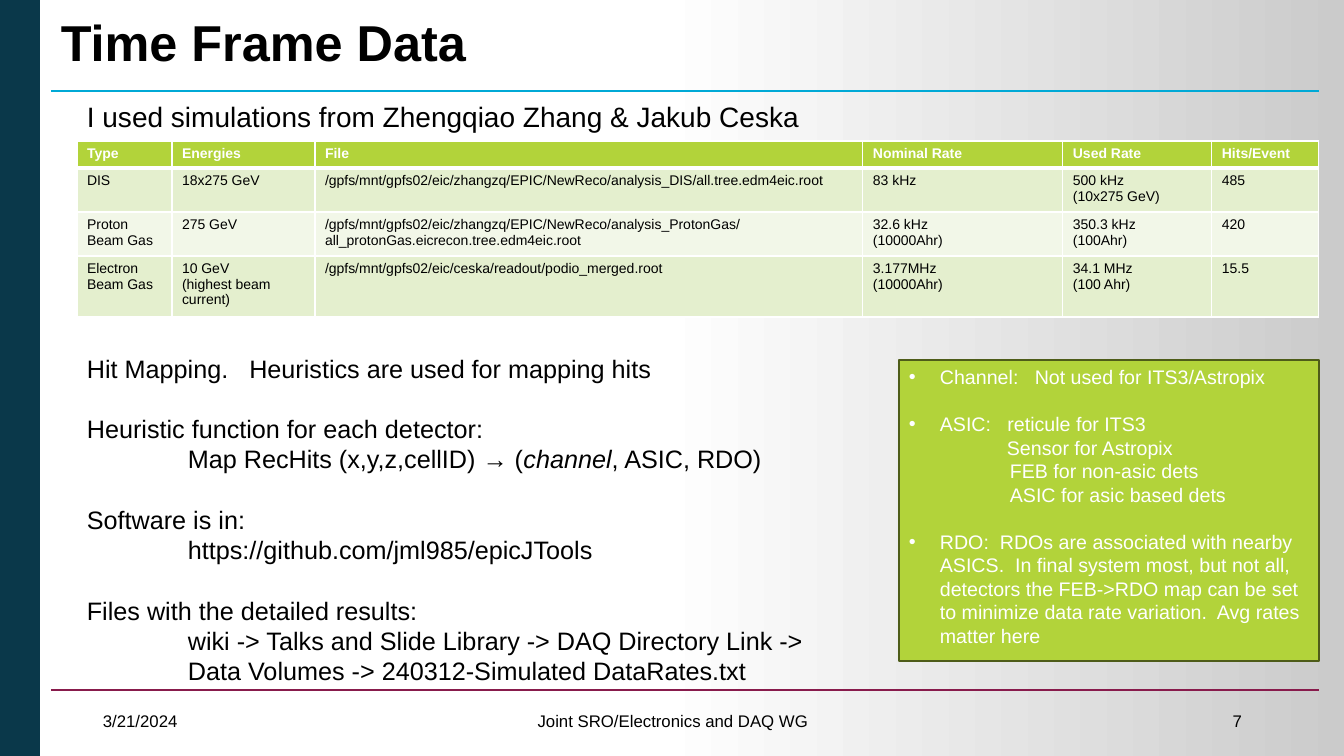
from pptx import Presentation
from pptx.dml.color import RGBColor
from pptx.enum.shapes import MSO_CONNECTOR, MSO_SHAPE
from pptx.enum.text import MSO_ANCHOR, PP_ALIGN
from pptx.oxml import parse_xml
from pptx.oxml.ns import nsdecls, qn
from pptx.util import Emu, Pt

STRAIGHT = MSO_CONNECTOR.STRAIGHT
RECTANGLE = MSO_SHAPE.RECTANGLE
TOP, MIDDLE = MSO_ANCHOR.TOP, MSO_ANCHOR.MIDDLE
LEFT, CENTER, RIGHT = PP_ALIGN.LEFT, PP_ALIGN.CENTER, PP_ALIGN.RIGHT

EMU_PER_PX = 12192000 / 1344
FONT = "Arial"
COLORS = {
    "black": "000000", "white": "FFFFFF", "navy": "0A384A", "gray": "CBCBCB",
    "cyan": "00A9D6", "maroon": "881B4C", "green": "B2D33A", "olive": "4E5C19",
    "band_dark": "E4EFCE", "band_light": "F2F7E8",
}


def px(length):
    return Emu(round(length * EMU_PER_PX))


def rgb(name):
    return RGBColor.from_string(COLORS[name])


def xml(tag, body="", attributes=""):
    return parse_xml(f"<a:{tag} {nsdecls('a')} {attributes}>{body}</a:{tag}>")


def solid(name):
    return f'<a:solidFill><a:srgbClr val="{COLORS[name]}"/></a:solidFill>'


def write(paragraph, text, size=18, color="black", bold=False, align=LEFT,
          pitch=None, before=0, margin=0, hanging=0):
    properties = paragraph._p.get_or_add_pPr()
    properties.set("marL", str(px(margin)))
    properties.set("indent", str(-px(hanging)))
    if hanging:
        properties.append(xml("buFont", attributes=f'typeface="{FONT}"'))
        properties.append(xml("buChar", attributes='char="•"'))
    paragraph.alignment = align
    if pitch:
        paragraph.line_spacing = pitch
    if before:
        paragraph.space_before = before
    pieces = (text,) if isinstance(text, str) else text
    for position, piece in enumerate(pieces):
        run = paragraph.add_run()
        run.text = piece
        run.font.name = FONT
        run.font.size = Pt(size)
        run.font.bold = bold
        run.font.italic = position % 2 == 1
        run.font.color.rgb = rgb(color)


class SlideBuilder:
    def __init__(self, slide):
        self.slide = slide

    def background(self, *stops):
        fill = self.slide.background.fill
        fill.gradient()
        fill.gradient_angle = 0
        stop_list = next(self.slide.element.iter(qn("a:gsLst")))
        for old in list(stop_list):
            stop_list.remove(old)
        for percent, name in stops:
            stop_list.append(xml("gs", f'<a:srgbClr val="{COLORS[name]}"/>',
                                 f'pos="{percent * 1000}"'))

    def rule(self, y, color, width):
        rule = self.slide.shapes.add_connector(
            STRAIGHT, px(51), px(y), px(1319), px(y))
        rule.line.color.rgb = rgb(color)
        rule.line.width = Pt(width)
        rule._element.spPr.append(xml("effectLst"))

    def fill_frame(self, frame, lines, anchor, style):
        frame.word_wrap = True
        frame.vertical_anchor = anchor
        for index, (text, extra) in enumerate(lines):
            paragraph = frame.add_paragraph() if index else frame.paragraphs[0]
            write(paragraph, text, **{**style, **extra})

    def text(self, box, *lines, anchor=TOP, **style):
        frame = self.slide.shapes.add_textbox(*map(px, box)).text_frame
        self.fill_frame(frame, lines, anchor, style)

    def panel(self, box, *lines, fill, line, **style):
        panel = self.slide.shapes.add_shape(RECTANGLE, *map(px, box))
        panel.shadow.inherit = False
        panel.fill.solid()
        panel.fill.fore_color.rgb = rgb(fill)
        panel.line.color.rgb = rgb(line)
        panel.line.width = Pt(1)
        self.fill_frame(panel.text_frame, lines, TOP, style)

    def cell(self, cell, text, row):
        properties = cell._tc.get_or_add_tcPr()
        for side in "LRTB":
            thick = (row, side) in ((0, "B"), (1, "T"))
            properties.append(xml(f"ln{side}", solid("white"),
                                  f'w="{Pt(3 if thick else 1)}"'))
        cell.fill.solid()
        fill = "green" if row == 0 else "band_dark" if row % 2 else "band_light"
        cell.fill.fore_color.rgb = rgb(fill)
        style = {"size": 10, "bold": row == 0,
                 "color": "black" if row else "white"}
        lines = [(line, {}) for line in text.split("\n")]
        self.fill_frame(cell.text_frame, lines, TOP, style)

    def table(self, left, top, widths, heights, rows):
        table = self.slide.shapes.add_table(
            len(heights), len(widths), px(left), px(top),
            px(sum(widths)), px(sum(heights))).table
        for column, width in zip(table.columns, widths):
            column.width = px(width)
        for row, height in zip(table.rows, heights):
            row.height = px(height)
        for r, values in enumerate(rows):
            for c, value in enumerate(values):
                self.cell(table.cell(r, c), value, r)


SIMULATIONS = [
    ("Type", "Energies", "File", "Nominal Rate", "Used Rate", "Hits/Event"),
    ("DIS", "18x275 GeV",
     "/gpfs/mnt/gpfs02/eic/zhangzq/EPIC/NewReco/analysis_DIS/all.tree.edm4eic.root",
     "83 kHz", "500 kHz\n(10x275 GeV)", "485"),
    ("Proton Beam Gas", "275 GeV",
     "/gpfs/mnt/gpfs02/eic/zhangzq/EPIC/NewReco/analysis_ProtonGas/"
     "all_protonGas.eicrecon.tree.edm4eic.root",
     "32.6 kHz\n(10000Ahr)", "350.3 kHz\n(100Ahr)", "420"),
    ("Electron Beam Gas", "10 GeV\n(highest beam current)",
     "/gpfs/mnt/gpfs02/eic/ceska/readout/podio_merged.root",
     "3.177MHz\n(10000Ahr)", "34.1 MHz\n(100 Ahr)", "15.5"),
]


def main():
    deck = Presentation()
    deck.slide_width, deck.slide_height = px(1344), px(756)
    page = SlideBuilder(deck.slides.add_slide(deck.slide_layouts[6]))

    page.background((3, "navy"), (3, "white"), (49, "white"), (100, "gray"))
    page.rule(91, "cyan", 2)
    page.rule(690, "maroon", 1)
    page.text((51, 0, 1268, 91), ("Time Frame Data", {}),
              anchor=MIDDLE, size=36, bold=True, pitch=0.9)
    page.text((77, 95, 823, 66),
              ("I used simulations from Zhengqiao Zhang & Jakub Ceska", {}), size=20)

    for left, width, footer, align in (
            (950, 302, "7", RIGHT),
            (93, 302, "3/21/2024", LEFT),
            (446, 454, "Joint SRO/Electronics and DAQ WG", CENTER)):
        page.text((left, 701, width, 40), (footer, {}),
                  anchor=MIDDLE, size=12, align=align)

    body_pitch = Pt(21.6)
    section, detail = {"before": body_pitch}, {"margin": 101}
    page.text(
        (77, 348, 1200, 346),
        ("Hit Mapping.   Heuristics are used for mapping hits", {}),
        ("Heuristic function for each detector:", section),
        (("Map RecHits (x,y,z,cellID) → (", "channel", ", ASIC, RDO)"), detail),
        ("Software is in:", section),
        ("https://github.com/jml985/epicJTools", detail),
        ("Files with the detailed results:", section),
        ("wiki -> Talks and Slide Library -> DAQ Directory Link ->", detail),
        ("Data Volumes -> 240312-Simulated DataRates.txt", detail),
        size=18, pitch=body_pitch)

    page.table(77, 141, (95, 143, 548, 200, 149, 107), (27, 44, 44, 61), SIMULATIONS)

    panel_pitch = Pt(16.8)
    bullet = {"margin": 31, "hanging": 31}
    next_bullet = {**bullet, "before": panel_pitch}
    page.panel(
        (899, 360, 420, 301),
        ("Channel:   Not used for ITS3/Astropix", bullet),
        ("ASIC:   reticule for ITS3", next_bullet),
        ("Sensor for Astropix", {"margin": 98}),
        ("FEB for non-asic dets", detail),
        ("ASIC for asic based dets", detail),
        ("RDO:  RDOs are associated with nearby ASICS.  In final system most, "
         "but not all, detectors the FEB->RDO map can be set to minimize data "
         "rate variation.  Avg rates matter here", next_bullet),
        fill="green", line="olive", size=14, color="white", pitch=panel_pitch)

    deck.save("out.pptx")


if __name__ == "__main__":
    main()
